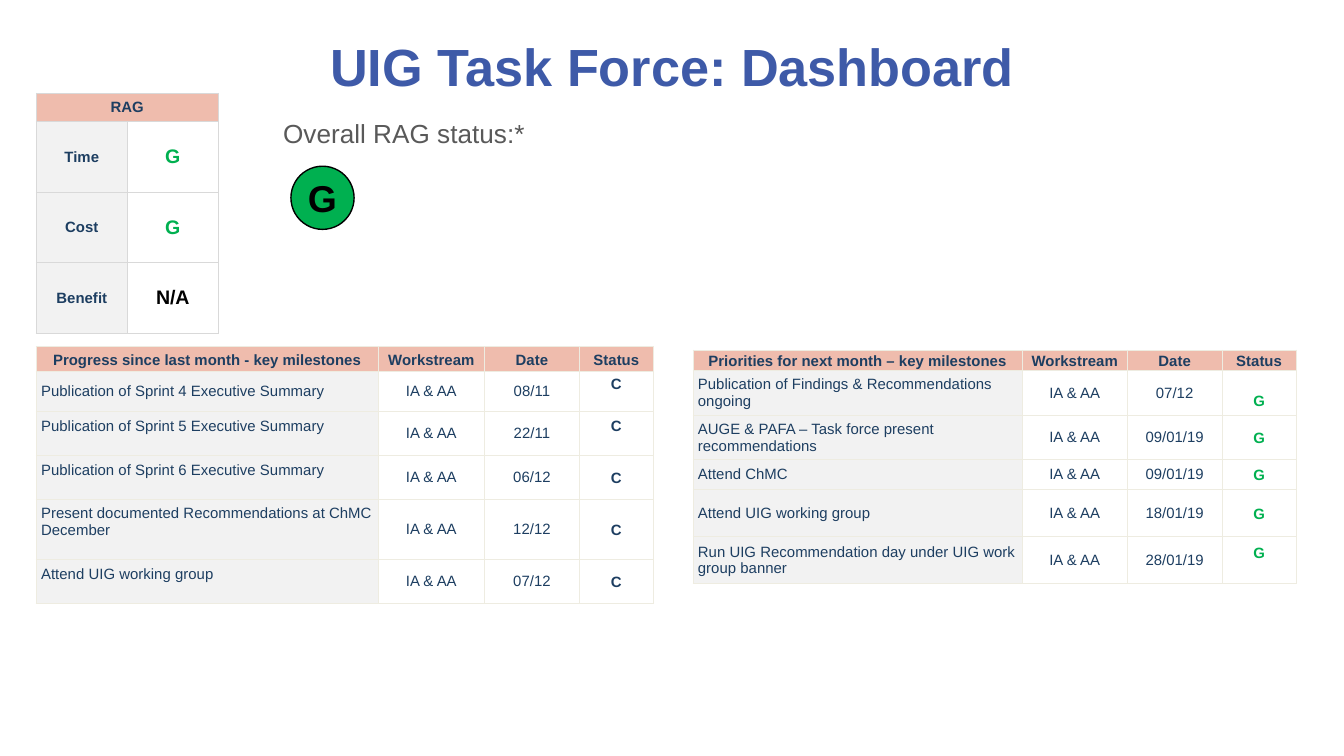
import lxml.etree
import pptx
import pptx.dml.color
import pptx.enum.shapes
import pptx.enum.text
import pptx.oxml.ns
import pptx.util

# Grid: 100 columns by 56.25 rows of square units
UNIT = pptx.util.Inches(0.1)
WIDE, HIGH = 100, 56.25

HUES = {
    "title": "3E5AA8", "navy": "1D3E61", "grey": "595959", "black": "000000",
    "green": "00B050", "peach": "EFBCAD", "pale": "F2F2F2", "white": "FFFFFF",
    "rule": "D9D9D9", "cream": "EEECE1",
}
ALIGN = pptx.enum.text.PP_ALIGN
MIDDLE = pptx.enum.text.MSO_ANCHOR.MIDDLE
BASE = {"name": "Arial", "size": pptx.util.Pt(8), "bold": False}
BOLD = BASE | {"bold": True}
MARK = BASE | {"size": pptx.util.Pt(10.5), "bold": True}
TIGHT = (0.1, 0.1, 0.1, 0)      # left, top, right, bottom
ROOMY = (0.36, 0.33, 0.36, 0.33)
UP, DOWN = -1.15, 1.15          # one line of text above or below the middle


def span(count):
    return round(count * UNIT)


def tint(name):
    return pptx.dml.color.RGBColor.from_string(HUES[name])


def apply(part, form):
    for key, value in form.items():
        setattr(part, key, value)


def write(frame, text, form, hue, align=ALIGN.CENTER):
    line = frame.paragraphs[0]
    line.alignment = align
    run = line.add_run()
    run.text = text
    apply(run.font, form)
    run.font.color.rgb = tint(hue)


def edge(cell, hue):
    props = cell._tc.get_or_add_tcPr()
    for side in ("a:lnL", "a:lnR", "a:lnT", "a:lnB"):
        node = props
        for tag, attrs in ((side, {"w": "6350"}), ("a:solidFill", {}),
                           ("a:srgbClr", {"val": HUES[hue]})):
            node = lxml.etree.SubElement(node, pptx.oxml.ns.qn(tag), attrs)


def fill_cell(cell, text, form, hue, back, pad, align=ALIGN.CENTER, shift=0):
    left, top, right, base = pad
    apply(cell, {
        "margin_left": span(left), "margin_right": span(right),
        "margin_top": span(top + max(shift, 0)),
        "margin_bottom": span(base + max(-shift, 0)),
        "vertical_anchor": MIDDLE,
    })
    cell.fill.solid()
    cell.fill.fore_color.rgb = tint(back)
    write(cell.text_frame, text, form, hue, align)


def add_grid(slide, left, top, cols, rows, hue):
    size = (left, top, sum(cols), sum(rows))
    table = slide.shapes.add_table(len(rows), len(cols), *map(span, size)).table
    apply(table, {"first_row": False, "horz_banding": False})
    for col, width in zip(table.columns, cols):
        col.width = span(width)
    for row, height in zip(table.rows, rows):
        row.height = span(height)
    for cell in table.iter_cells():
        edge(cell, hue)
    return table


def add_title(slide, left, top, width, height):
    box = slide.shapes.add_textbox(*map(span, (left, top, width, height)))
    apply(box.text_frame, {"word_wrap": True, "vertical_anchor": MIDDLE})
    form = BOLD | {"size": pptx.util.Pt(28)}
    write(box.text_frame, "UIG Task Force: Dashboard", form, "title")


def add_status(slide, left, top, width):
    # Label
    box = slide.shapes.add_textbox(*map(span, (left, top, width, 3.4)))
    box.text_frame.word_wrap = True
    form = BASE | {"size": pptx.util.Pt(14)}
    write(box.text_frame, "Overall RAG status:*", form, "grey", ALIGN.LEFT)
    # Light
    light = slide.shapes.add_shape(
        pptx.enum.shapes.MSO_SHAPE.OVAL,
        *map(span, (left + 1.57, top + 4.15, 4.7, 4.7)))
    light.shadow.inherit = False
    light.fill.solid()
    light.fill.fore_color.rgb = tint("green")
    light.line.color.rgb = tint("black")
    light.line.width = pptx.util.Pt(0.75)
    apply(light.text_frame, {
        "word_wrap": False, "vertical_anchor": MIDDLE,
        "margin_left": span(2.5), "margin_right": span(2.5),
        "margin_top": 0, "margin_bottom": 0,
    })
    write(light.text_frame, "G", BOLD | {"size": pptx.util.Pt(20)}, "black")


def add_rag(slide, left, top, width, height, marks):
    head = 2.1
    step = (height - head) / len(marks)
    table = add_grid(slide, left, top, [width / 2] * 2,
                     [head] + [step] * len(marks), "rule")
    table.cell(0, 0).merge(table.cell(0, 1))
    fill_cell(table.cell(0, 0), "RAG", BOLD, "navy", "peach", ROOMY)
    for row, (name, mark, hue) in enumerate(marks, 1):
        fill_cell(table.cell(row, 0), name, BOLD, "navy", "pale", ROOMY)
        fill_cell(table.cell(row, 1), mark, MARK, hue, "white", ROOMY)


def add_plan(slide, left, top, cols, head, title, mark, hue, items):
    rows = [head] + [item[2] for item in items]
    table = add_grid(slide, left, top, cols, rows, "cream")
    for col, text in enumerate((title, "Workstream", "Date", "Status")):
        fill_cell(table.cell(0, col), text, BOLD, "navy", "peach", TIGHT)
    for row, (name, date, _, lift, nudge) in enumerate(items, 1):
        fill_cell(table.cell(row, 0), name, BASE, "navy", "pale", ROOMY,
                  ALIGN.LEFT, lift)
        for col, text in enumerate(("IA & AA", date), 1):
            fill_cell(table.cell(row, col), text, BASE, "navy", "white", ROOMY)
        fill_cell(table.cell(row, 3), mark, BOLD, hue, "white", TIGHT,
                  shift=nudge)


RAG = [("Time", "G", "green"), ("Cost", "G", "green"), ("Benefit", "N/A", "black")]

# Name, date, row height, shift of the name, shift of the mark
DONE = [
    ("Publication of Sprint 4 Executive Summary", "08/11", 2.95, 0, UP),
    ("Publication of Sprint 5 Executive Summary", "22/11", 3.28, UP, UP),
    ("Publication of Sprint 6 Executive Summary", "06/12", 3.28, UP, 0),
    ("Present documented Recommendations at ChMC December", "12/12", 4.47, UP, 0),
    ("Attend UIG working group", "07/12", 3.28, UP, 0),
]
NEXT = [
    ("Publication of Findings & Recommendations ongoing", "07/12", 3.27, 0, DOWN),
    ("AUGE & PAFA – Task force present recommendations", "09/01/19", 3.27, 0, 0),
    ("Attend ChMC", "09/01/19", 2.23, 0, 0),
    ("Attend UIG working group", "18/01/19", 3.5, 0, 0),
    ("Run UIG Recommendation day under UIG work group banner", "28/01/19",
     3.5, 0, UP),
]


def main():
    deck = pptx.Presentation()
    apply(deck, {"slide_width": span(WIDE), "slide_height": span(HIGH)})
    slide = deck.slides.add_slide(deck.slide_layouts[6])
    add_title(slide, 5, 1.35, 90, 7)
    add_rag(slide, 2.7, 6.95, 13.55, 17.87, RAG)
    add_plan(slide, 2.7, 25.8, (25.45, 7.9, 7.07, 5.5), 1.87,
             "Progress since last month - key milestones", "C", "navy", DONE)
    add_plan(slide, 51.57, 26.05, (24.5, 7.8, 7.07, 5.5), 1.52,
             "Priorities for next month – key milestones", "G", "green", NEXT)
    add_status(slide, 20.08, 8.22, 25.2)
    deck.save("out.pptx")


if __name__ == "__main__":
    main()
